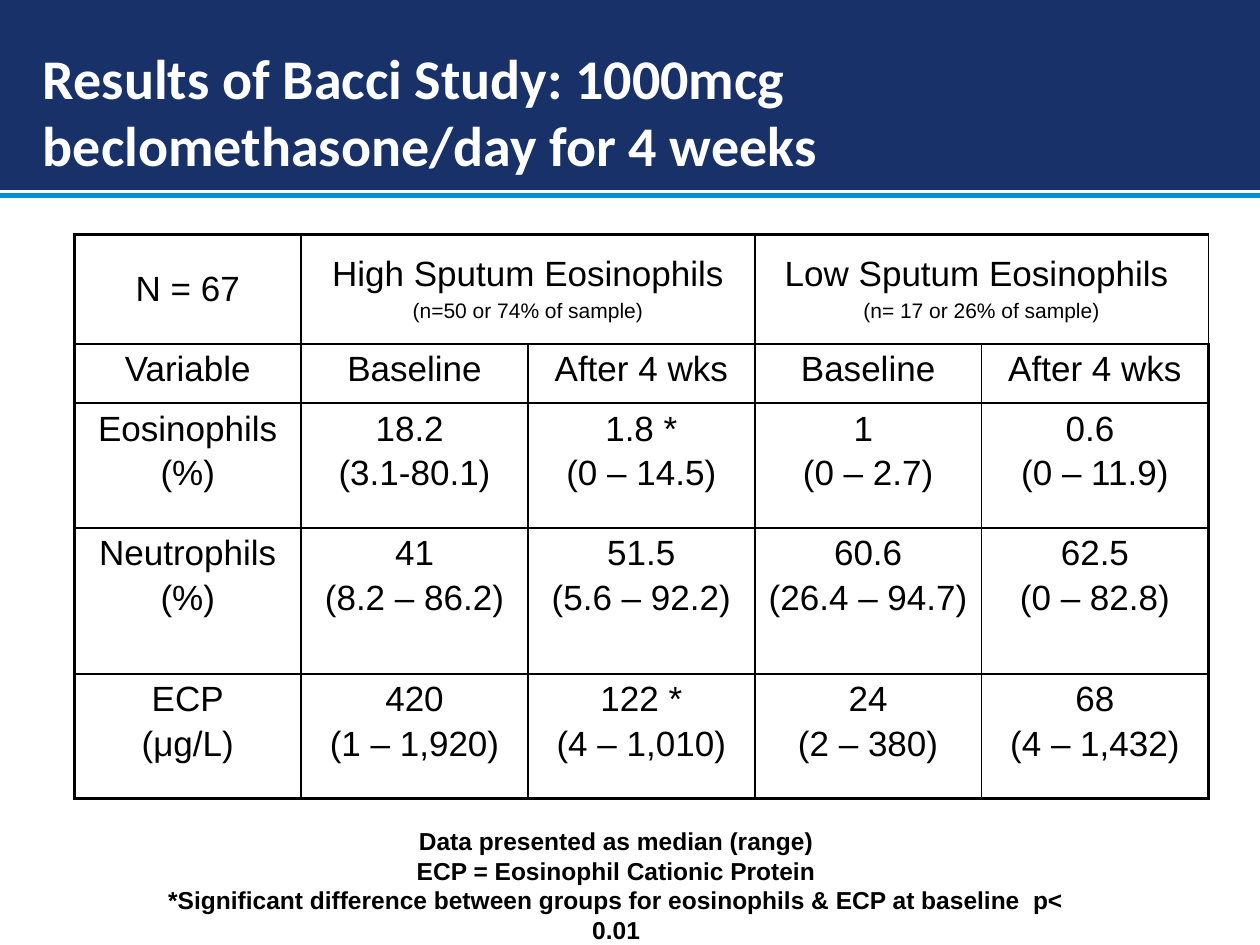
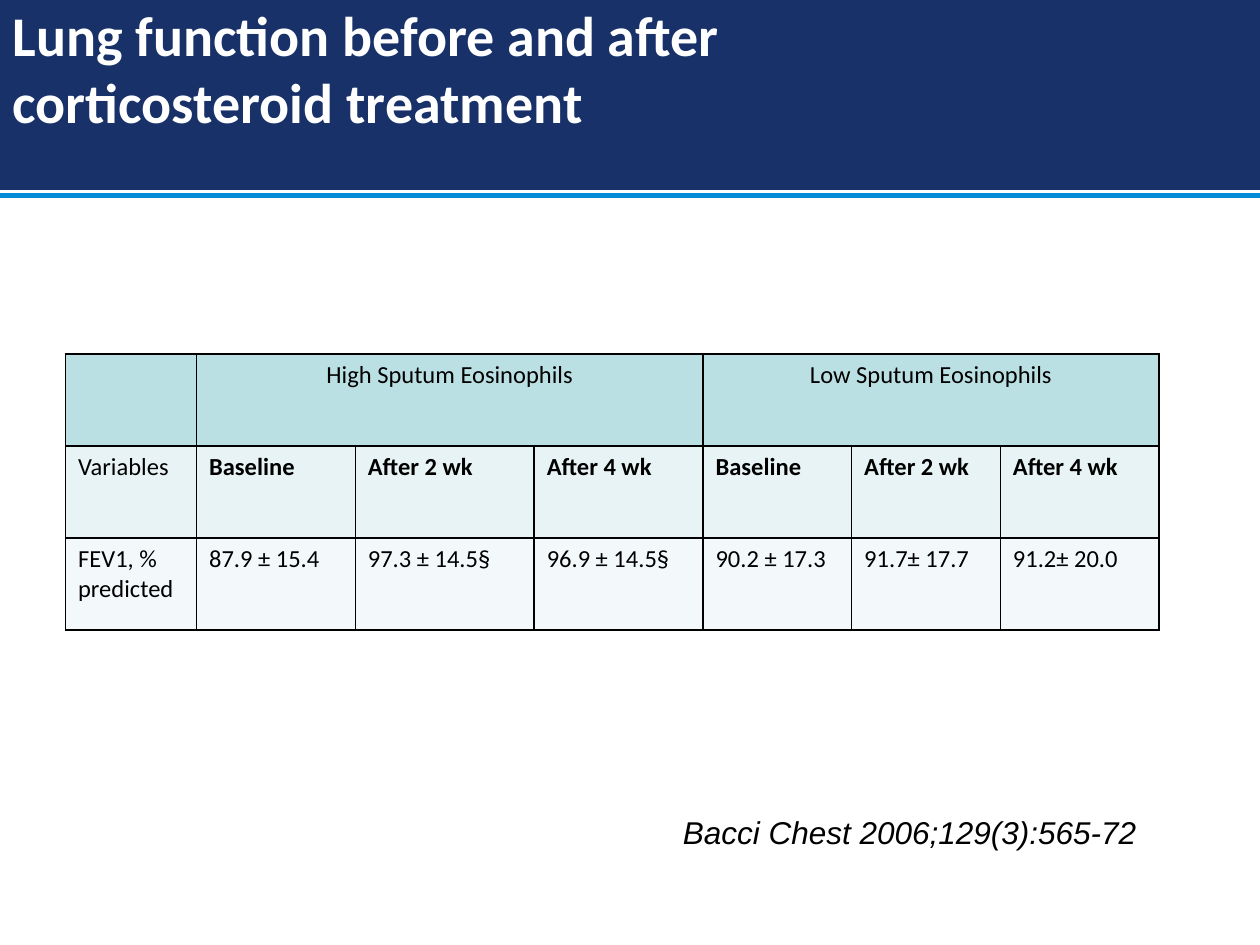
from pptx import Presentation
from pptx.dml.color import RGBColor
from pptx.enum.shapes import MSO_CONNECTOR, MSO_SHAPE
from pptx.enum.text import MSO_ANCHOR, MSO_AUTO_SIZE, PP_ALIGN
from pptx.oxml.ns import qn
from pptx.util import Inches, Pt
from lxml.etree import SubElement

COLORS = {"navy": "183169", "blue": "008CD6", "white": "FFFFFF", "black": "000000",
          "teal": "BBE0E3", "pale": "E7F3F4", "faint": "F3F9FA"}

# A cell is a list of (text, size) paragraphs or one string with line breaks.
RESULTS = {
    "title": "Results of Bacci Study: 1000mcg beclomethasone/day for 4 weeks",
    "title_box": (0.24, 0.01, 9.29, 1.74),
    "table_at": (0.59, 1.86),
    "cols": [1.8] * 5,
    "heights": [0.87, 0.47, 0.99, 1.16, 0.99],
    "rows": [
        ["N = 67",
         [("High Sputum Eosinophils", 20), ("(n=50 or 74% of sample)", 12)], None,
         [("Low Sputum Eosinophils ", 20), ("(n= 17 or 26% of sample)", 12)], None],
        ["Variable", "Baseline", "After 4 wks", "Baseline", "After 4 wks"],
        ["Eosinophils\n(%)", "18.2 \n(3.1-80.1)", "1.8 *\n(0 – 14.5)",
         "1 \n(0 – 2.7)", "0.6 \n(0 – 11.9)"],
        ["Neutrophils\n(%)", "41\n(8.2 – 86.2)", "51.5\n(5.6 – 92.2)",
         "60.6\n(26.4 – 94.7)", "62.5\n(0 – 82.8)"],
        ["ECP\n(μg/L)", "420\n(1 – 1,920)", "122 *\n(4 – 1,010)",
         "24\n(2 – 380)", "68\n(4 – 1,432)"],
    ],
    "font": {"name": "Arial", "size": Pt(20)},
    "outer_border": 2.25,
    "note": ["Data presented as median (range)",
             "ECP = Eosinophil Cationic Protein",
             "*Significant difference between groups for eosinophils & ECP"
             " at baseline  p< 0.01"],
    "note_box": (1.09, 6.51, 7.6, 0.8),
    "note_font": {"name": "Arial", "size": Pt(14), "bold": True},
}
LUNG = {
    "title": "Lung function before and after \vcorticosteroid treatment",
    "title_box": (0, 0.28, 7.22, 1.05),
    "title_bottom": 0.59,
    "table_at": (0.52, 2.81),
    "cols": [1.04, 1.26, 1.42, 1.34, 1.18, 1.18, 1.26],
    "heights": [0.73] * 3,
    "rows": [
        ["", "High Sputum Eosinophils", None, None, "Low Sputum Eosinophils", None, None],
        ["Variables"] + ["Baseline", "After 2 wk", "After 4 wk"] * 2,
        ["FEV1, % predicted", "87.9 ± 15.4", "97.3 ± 14.5§", "96.9 ± 14.5§",
         "90.2 ± 17.3", "91.7± 17.7", "91.2± 20.0"],
    ],
    "font": {"name": "Calibri", "size": Pt(14)},
    "row_fills": ["teal", "pale", "faint"],
    "outer_border": 1,
    "note": ["Bacci Chest 2006;129(3):565-72"],
    "note_box": (5.24, 6.4, 3.96, 0.4),
    "note_font": {"name": "Arial", "size": Pt(18), "italic": True},
}


def rgb(name):
    return RGBColor.from_string(COLORS[name])


def set_font(font, formats, color="black"):
    for key, value in formats.items():
        setattr(font, key, value)
    font.color.rgb = rgb(color)


def add_bands(slide, layout):
    """Draw the header band and rule, then move them behind the layout's placeholders."""
    rule = slide.shapes.add_connector(MSO_CONNECTOR.STRAIGHT, 0, Inches(1.55),
                                      Inches(10), Inches(1.55))
    SubElement(rule.element.spPr, qn("a:effectLst"))
    band = slide.shapes.add_shape(MSO_SHAPE.RECTANGLE, 0, 0, Inches(10), Inches(1.49))
    band.shadow.inherit = False
    band.fill.solid()
    band.fill.fore_color.rgb = rgb("navy")
    for i, (s, color) in enumerate([(rule, "blue"), (band, "navy")]):
        s.line.color.rgb = rgb(color)
        s.line.width = Pt(3)
        layout.shapes.element.insert(2 + i, s.element)


def add_title(slide, data):
    s = slide.shapes.title
    s.left, s.top, s.width, s.height = map(Inches, data["title_box"])
    tf = s.text_frame
    tf.text = data["title"]
    tf.auto_size = MSO_AUTO_SIZE.NONE
    tf.vertical_anchor = MSO_ANCHOR.MIDDLE
    tf.margin_bottom = Inches(data.get("title_bottom", 0.05))
    p = tf.paragraphs[0]
    p.alignment = PP_ALIGN.LEFT
    for r in p.runs:
        set_font(r.font, {"name": "Calibri", "size": Pt(32), "bold": True}, "white")


def set_borders(cell, widths):
    tcPr = cell._tc.get_or_add_tcPr()
    for side, width in zip("LRTB", widths):
        ln = SubElement(tcPr, qn(f"a:ln{side}"), w=str(Pt(width)))
        fill = SubElement(ln, qn("a:solidFill"))
        SubElement(fill, qn("a:srgbClr"), val=COLORS["black"])


def fill_text(tf, lines, font, align):
    """Write (text, formats) lines as paragraphs, spaced after the first."""
    for i, (text, extra) in enumerate(lines):
        p = tf.add_paragraph() if i else tf.paragraphs[0]
        p.alignment = align
        r = p.add_run()
        r.text = text
        set_font(r.font, {**font, **extra})


def add_table(slide, data):
    rows, cols = data["rows"], data["cols"]
    last_row, last_col = len(rows) - 1, len(cols) - 1
    left, top = data["table_at"]
    table = slide.shapes.add_table(
        len(rows), len(cols), Inches(left), Inches(top),
        Inches(sum(cols)), Inches(sum(data["heights"]))).table
    table.first_row = table.horz_banding = False
    for col, width in zip(table.columns, cols):
        col.width = Inches(width)
    for row, height in zip(table.rows, data["heights"]):
        row.height = Inches(height)

    fills = data.get("row_fills")
    for i, row in enumerate(rows):
        for j, content in enumerate(row):
            cell = table.cell(i, j)
            edges = (j == 0, j == last_col, i == 0, i == last_row)
            set_borders(cell, [data["outer_border"] if e else 1 for e in edges])
            if fills:
                cell.fill.solid()
                cell.fill.fore_color.rgb = rgb(fills[i])
            else:
                cell.fill.background()
                if i == 0:
                    cell.vertical_anchor = MSO_ANCHOR.MIDDLE
            if not content:
                continue
            if isinstance(content, str):
                lines = [(text, {}) for text in content.split("\n")]
            else:
                lines = [(text, {"size": Pt(size)}) for text, size in content]
            font = dict(data["font"], bold=bool(fills) and i == 1 and j > 0)
            centred = not fills or i == 0
            fill_text(cell.text_frame, lines, font,
                      PP_ALIGN.CENTER if centred else PP_ALIGN.LEFT)
            for p in cell.text_frame.paragraphs[1:]:
                p.space_before = Pt(3)

    groups = [j for j, content in enumerate(rows[0]) if content and j]
    for start, end in zip(groups, groups[1:] + [len(cols)]):
        table.cell(0, start).merge(table.cell(0, end - 1))


def add_note(slide, data):
    tf = slide.shapes.add_textbox(*map(Inches, data["note_box"])).text_frame
    tf.word_wrap = True
    fill_text(tf, [(text, {}) for text in data["note"]], data["note_font"], PP_ALIGN.CENTER)


def main():
    prs = Presentation()
    prs.slide_width, prs.slide_height = Inches(10), Inches(7.5)
    layout = prs.slide_layouts[5]
    for i, data in enumerate([RESULTS, LUNG]):
        slide = prs.slides.add_slide(layout)
        if i == 0:
            add_bands(slide, layout)
        add_title(slide, data)
        add_table(slide, data)
        add_note(slide, data)
    prs.save("out.pptx")


if __name__ == "__main__":
    main()
